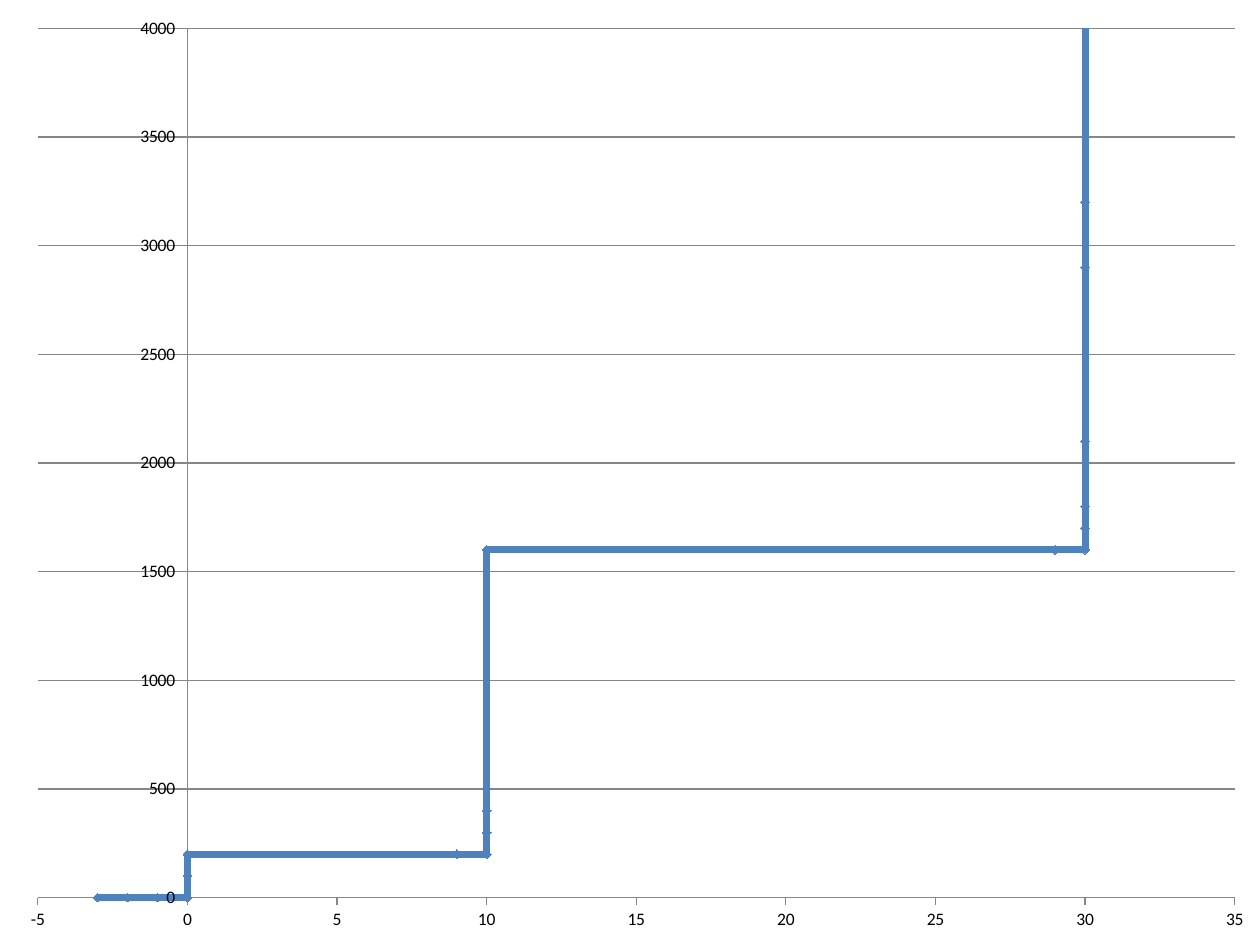
from dataclasses import dataclass

from lxml import etree
from pptx import Presentation
from pptx.chart.data import XyChartData
from pptx.dml.color import RGBColor
from pptx.enum.chart import XL_CHART_TYPE, XL_MARKER_STYLE, XL_TICK_MARK
from pptx.oxml.ns import qn
from pptx.util import Inches, Pt

LINES = XL_CHART_TYPE.XY_SCATTER_LINES
DIAMOND = XL_MARKER_STYLE.DIAMOND
OUTSIDE = XL_TICK_MARK.OUTSIDE
NO_TICK = XL_TICK_MARK.NONE


@dataclass(frozen=True)
class Theme:
    font: str = "Calibri"
    text_size: float = 10
    text: str = "000000"
    series: str = "4F81BD"
    rule: str = "868686"
    series_width: float = 4
    rule_width: float = 0.75
    marker_size: int = 5


# Staircase readings, in drawing order: x, y, number of equal readings
READINGS = [
    # Start, below zero
    (-3, 0, 2), (-2, 0, 4), (-1, 0, 2),
    # Rise at 0
    (0, 0, 7), (0, 100, 6), (0, 200, 3),
    # Step to 10 and rise
    (9, 200, 2), (10, 200, 3), (10, 300, 2), (10, 400, 2), (10, 500, 2), (10, 1600, 3),
    # Step to 30 and rise beyond the axis
    (29, 1600, 2), (30, 1600, 1), (30, 1700, 4), (30, 1800, 4), (30, 2100, 2),
    (30, 2900, 2), (30, 3200, 2), (30, 9100, 2),
]


class SlideBuilder:
    def __init__(self, slide, theme):
        self.slide = slide
        self.theme = theme

    def style_line(self, line, color, width):
        line.color.rgb = RGBColor.from_string(color)
        line.width = Pt(width)

    def scatter_chart(self, left, top, width, height, name, readings):
        chart_data = XyChartData()
        series_data = chart_data.add_series(name)
        for x, y, count in readings:
            for _ in range(count):
                series_data.add_data_point(x, y)
        frame = self.slide.shapes.add_chart(
            LINES, Inches(left), Inches(top), Inches(width), Inches(height), chart_data)
        chart = frame.chart
        chart.has_title = False
        chart.has_legend = False
        chart.font.name = self.theme.font
        chart.font.size = Pt(self.theme.text_size)
        chart.font.color.rgb = RGBColor.from_string(self.theme.text)
        chart.plots[0].vary_by_categories = False

        series = chart.plots[0].series[0]
        series.smooth = False
        self.style_line(series.format.line, self.theme.series, self.theme.series_width)
        series.marker.style = DIAMOND
        series.marker.size = self.theme.marker_size
        series.marker.format.fill.solid()
        series.marker.format.fill.fore_color.rgb = RGBColor.from_string(self.theme.series)
        self.style_line(series.marker.format.line, self.theme.series, self.theme.rule_width)
        return chart

    def axis(self, axis, low, high, step, gridlines):
        axis.minimum_scale, axis.maximum_scale, axis.major_unit = low, high, step
        axis.major_tick_mark = OUTSIDE
        axis.minor_tick_mark = NO_TICK
        axis.has_title = False
        axis.has_major_gridlines = gridlines
        axis.tick_labels.number_format = "General"
        axis.tick_labels.number_format_is_linked = False
        self.style_line(axis.format.line, self.theme.rule, self.theme.rule_width)
        if gridlines:
            self.style_line(axis.major_gridlines.format.line,
                            self.theme.rule, self.theme.rule_width)

    def plot_area(self, chart, **fractions):
        plot_area = chart.element.find(".//" + qn("c:plotArea"))
        for previous in plot_area.findall(qn("c:layout")):
            plot_area.remove(previous)
        layout = etree.Element(qn("c:layout"))
        manual = etree.SubElement(layout, qn("c:manualLayout"))
        settings = {"layoutTarget": "inner", "xMode": "edge", "yMode": "edge", **fractions}
        for tag, value in settings.items():
            etree.SubElement(manual, qn("c:" + tag)).set("val", str(value))
        plot_area.insert(0, layout)


def main():
    presentation = Presentation()
    presentation.slide_width, presentation.slide_height = Inches(10), Inches(7.5)
    slide = presentation.slides.add_slide(presentation.slide_layouts[6])
    builder = SlideBuilder(slide, Theme())

    # Full-slide staircase chart
    chart = builder.scatter_chart(0, 0, 10, 7.5, "Series 1", READINGS)
    builder.axis(chart.category_axis, -5, 35, 5, gridlines=False)
    builder.axis(chart.value_axis, 0, 4000, 500, gridlines=True)
    builder.plot_area(chart, x=0.03, y=0.03, w=0.95, h=0.92)

    presentation.save("out.pptx")


if __name__ == "__main__":
    main()
